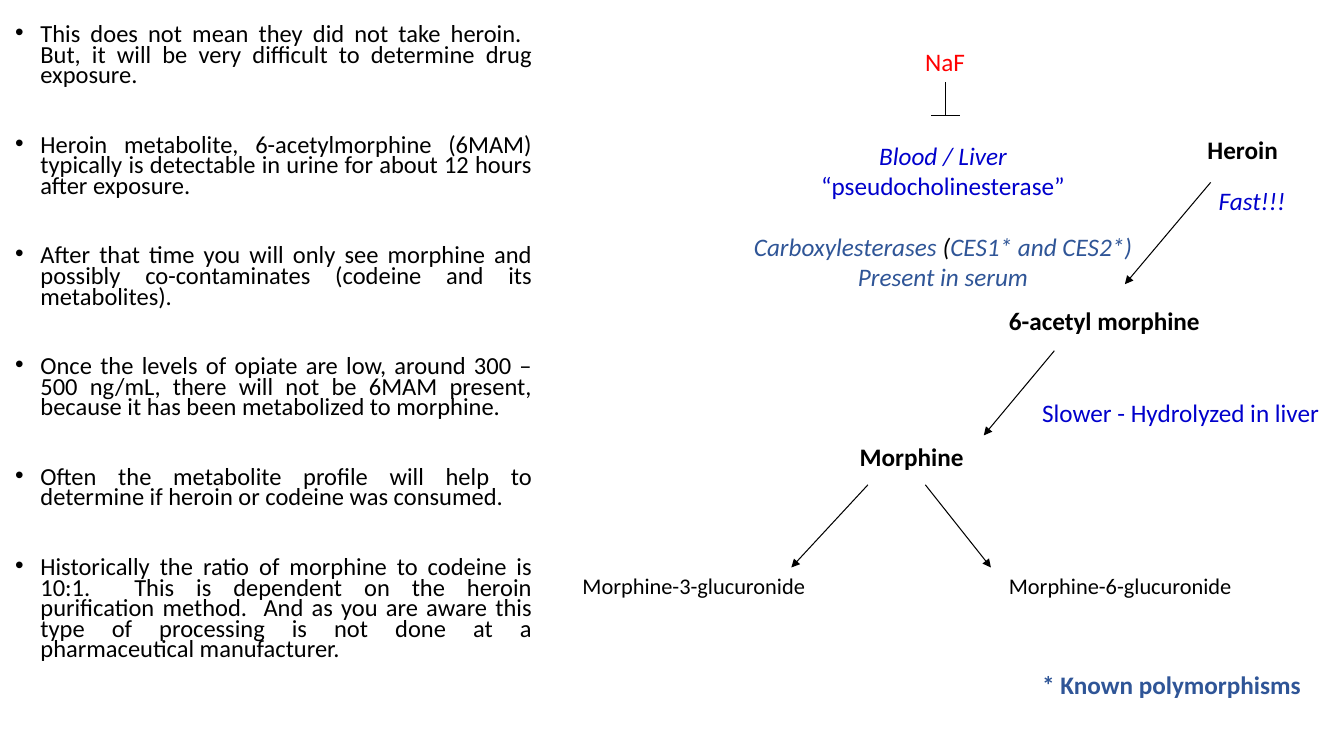
from lxml import etree
from pptx import Presentation
from pptx import util as u
from pptx.dml.color import RGBColor
from pptx.enum import shapes, text
from pptx.oxml.ns import qn

BLACK, BLUE, STEEL, RED = "000000", "0000CC", "2F5597", "FF0000"

presentation = Presentation()
presentation.slide_width = u.Inches(13.333)
presentation.slide_height = u.Inches(7.5)
slide = presentation.slides.add_slide(presentation.slide_layouts[1])

# All lengths are percentages of the slide's width and height
column = presentation.slide_width / 100
row = presentation.slide_height / 100


def add_run(paragraph, words, size, color, bold=False, italic=False):
    run = paragraph.add_run()
    run.text = words
    run.font.name = "Calibri"
    run.font.size = u.Pt(size)
    run.font.bold = bold
    run.font.italic = italic
    run.font.color.rgb = RGBColor.from_string(color)


def add_line(start, end, width):
    line = slide.shapes.add_connector(
        shapes.MSO_CONNECTOR.STRAIGHT,
        int(start[0] * column), int(start[1] * row),
        int(end[0] * column), int(end[1] * row))
    line.line.color.rgb = RGBColor.from_string(BLACK)
    line.line.width = u.Pt(width)
    etree.SubElement(line._element.spPr, qn("a:effectLst"))
    return line


# Bulleted findings in the body placeholder
title = slide.shapes.title
title._element.getparent().remove(title._element)
findings = [
    "This does not mean they did not take heroin.  But, it will be very difficult to determine drug exposure.",
    "Heroin metabolite, 6-acetylmorphine (6MAM) typically is detectable in urine for about 12 hours after exposure.",
    "After that time you will only see morphine and possibly co-contaminates (codeine and its metabolites).",
    "Once the levels of opiate are low, around 300 – 500 ng/mL, there will not be 6MAM present, because it has been metabolized to morphine.",
    "Often the metabolite profile will help to determine if heroin or codeine was consumed.",
    "Historically the ratio of morphine to codeine is 10:1.  This is dependent on the heroin purification method.  And as you are aware this type of processing is not done at a pharmaceutical manufacturer.",
]
body = slide.placeholders[1]
body.left, body.top = int(0.38 * column), int(2.8 * row)
body.width, body.height = int(40 * column), int(95.87 * row)
body.text_frame.auto_size = text.MSO_AUTO_SIZE.NONE
for index, finding in enumerate(findings):
    paragraph = body.text_frame.paragraphs[0] if index == 0 else body.text_frame.add_paragraph()
    paragraph.alignment = text.PP_ALIGN.JUSTIFY
    paragraph.line_spacing = 0.7
    paragraph.space_before = u.Pt(35 if index else 10)
    properties = paragraph._p.get_or_add_pPr()
    properties.set("marL", str(u.Inches(0.25)))
    properties.set("indent", str(u.Inches(-0.25)))
    etree.SubElement(properties, qn("a:buFont")).set("typeface", "Arial")
    etree.SubElement(properties, qn("a:buChar")).set("char", "•")
    add_run(paragraph, finding, 17.5, BLACK)

# Pathway labels: words, left, top, width, size, colour, bold, italic, wrap
labels = [
    ("Heroin", 89.1, 17.07, 6.83, 18, BLACK, True, False, False),
    ("6-acetyl morphine", 74.33, 39.73, 15.83, 18, BLACK, True, False, False),
    ("Morphine", 63.23, 57.73, 9.3, 18, BLACK, True, False, False),
    ("Morphine-3-glucuronide", 42.6, 75.07, 18.3, 16, BLACK, False, False, False),
    ("Morphine-6-glucuronide", 74.33, 75.07, 18.3, 16, BLACK, False, False, False),
    ("Fast!!!", 89.93, 23.87, 11.03, 18, BLUE, False, True, True),
    ("Slower - Hydrolyzed in liver", 76.8, 51.87, 24.6, 18, BLUE, False, False, True),
    ("* Known polymorphisms", 76.8, 87.87, 21.38, 18, STEEL, True, False, False),
    ("NaF", 68.1, 5.47, 4.5, 18, RED, False, False, False),
]
boxes = {}
for words, left, top, width, size, color, bold, italic, wrap in labels:
    box = slide.shapes.add_textbox(
        int(left * column), int(top * row), int(width * column), int(size * 0.3 * row))
    box.text_frame.word_wrap = wrap
    box.text_frame.auto_size = text.MSO_AUTO_SIZE.SHAPE_TO_FIT_TEXT
    add_run(box.text_frame.paragraphs[0], words, size, color, bold, italic)
    boxes[words] = box

# Enzymes: space before, then runs of words, colour, italic
enzyme_lines = [
    (0, [("Blood / Liver", BLUE, True)]),
    (0, [("“pseudocholinesterase”", BLUE, False)]),
    (22, [("Carboxylesterases", STEEL, True), (" (", BLACK, True),
          ("CES1* and CES2*)", STEEL, True)]),
    (0, [("Present in serum", STEEL, True)]),
]
enzymes = slide.shapes.add_textbox(
    int(55.2 * column), int(17.87 * row), int(29.93 * column), int(21.6 * row))
enzymes.text_frame.word_wrap = False
enzymes.text_frame.auto_size = text.MSO_AUTO_SIZE.SHAPE_TO_FIT_TEXT
for index, (space, runs) in enumerate(enzyme_lines):
    paragraph = enzymes.text_frame.paragraphs[0] if index == 0 else enzymes.text_frame.add_paragraph()
    paragraph.alignment = text.PP_ALIGN.CENTER
    paragraph.space_before = u.Pt(space)
    for words, color, italic in runs:
        add_run(paragraph, words, 18, color, italic=italic)

# Reaction arrows
reactions = [
    ((90.08, 24.13), (83.7, 37.6)),
    ((78.45, 46.4), (73.2, 57.6)),
    ((64.58, 64.13), (58.88, 75.07)),
    ((68.85, 64.13), (73.73, 75.07)),
]
for start, end in reactions:
    arrow = add_line(start, end, 0.75)
    etree.SubElement(arrow.line._get_or_add_ln(), qn("a:tailEnd")).set("type", "triangle")

# Inhibition mark below NaF
stem = add_line((70.35, 11.07), (70.35, 15.2), 0.5)
stem.begin_connect(boxes["NaF"], 2)
add_line((69.3, 15.2), (71.4, 15.2), 0.5)

presentation.save("out.pptx")
